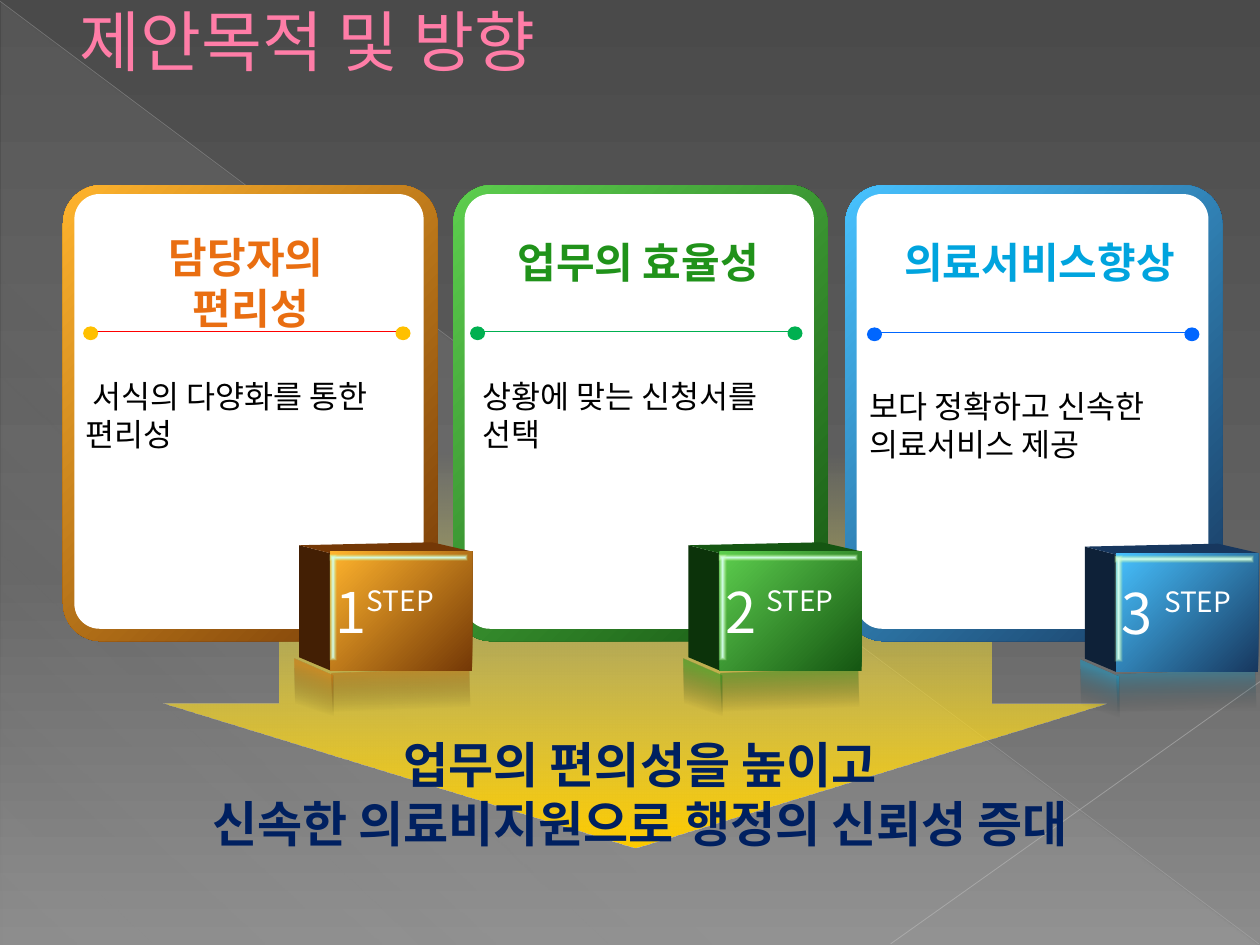
from dataclasses import dataclass

from lxml import etree
from pptx import Presentation
from pptx.dml.color import RGBColor
from pptx.enum.shapes import MSO_CONNECTOR, MSO_SHAPE as SHAPE
from pptx.enum.text import MSO_ANCHOR as ANCHOR, MSO_AUTO_SIZE as AUTOSIZE, PP_ALIGN as ALIGN
from pptx.oxml.ns import qn
from pptx.util import Pt

NOTO = "Noto Sans CJK KR"
SPARTAN = "League Spartan"
WHITE, BLACK = "FFFFFF", "000000"
GLOW = [(0, "D5FFF2", 100), (100, "CCFF99", 0)]


@dataclass
class Step:
    number: str
    heading: str
    body: str
    body_font: str
    accent: str
    rule: str
    dot: str
    dark: str
    light: str
    top: str
    side: str
    reflection_alpha: int
    card: tuple        # left, width
    heading_box: tuple
    rule_x: float
    dots_x: tuple
    rule_y: float
    body_at: tuple
    cube_at: tuple
    label_dx: float


def rgb(value: str) -> RGBColor:
    return RGBColor.from_string(value)


def add_color(parent, value: str, alpha: float = 100) -> None:
    clr = etree.SubElement(parent, qn("a:srgbClr"), val=value)
    if alpha < 100:
        etree.SubElement(clr, qn("a:alpha"), val=str(int(alpha * 1000)))


def set_gradient(fill, parent, stops: list, angle: float | None) -> None:
    """Replace the fill in parent by a gradient; no angle means from the centre."""
    fill.solid()
    grad = etree.Element(qn("a:gradFill"), rotWithShape="1")
    lst = etree.SubElement(grad, qn("a:gsLst"))
    for pos, value, alpha in stops:
        add_color(etree.SubElement(lst, qn("a:gs"), pos=str(pos * 1000)), value, alpha)
    if angle is None:
        way = etree.SubElement(grad, qn("a:path"), path="shape")
        etree.SubElement(way, qn("a:fillToRect"), l="50000", t="50000", r="50000", b="50000")
    else:
        etree.SubElement(grad, qn("a:lin"), ang=str(int(angle * 60000)), scaled="0")
    parent.replace(parent.find(qn("a:solidFill")), grad)


def paint(s, fill: str | list, angle: float | None = None) -> None:
    s.shadow.inherit = False
    s.line.fill.background()
    if isinstance(fill, str):
        s.fill.solid()
        s.fill.fore_color.rgb = rgb(fill)
    else:
        set_gradient(s.fill, s._element.spPr, fill, angle)


def add_box(shapes, kind, box: tuple, fill: str | list, angle: float | None = None,
            rot: float = 0, adj: tuple = ()):
    s = shapes.add_shape(kind, *(Pt(v) for v in box))
    s.rotation = rot
    for i, value in enumerate(adj):
        s.adjustments[i] = value
    paint(s, fill, angle)
    return s


def add_face(shapes, points: list, fill: str) -> None:
    first, *rest = [(Pt(x), Pt(y)) for x, y in points]
    builder = shapes.build_freeform(*first)
    builder.add_line_segments(rest, close=True)
    paint(builder.convert_to_shape(), fill)


def add_line(shapes, ends: tuple, color: str, width: float, alpha: float = 100) -> None:
    s = shapes.add_connector(MSO_CONNECTOR.STRAIGHT, *(Pt(v) for v in ends))
    s.line.width = Pt(width)
    s.line.color.rgb = rgb(color)
    solid = s.line._ln.find(qn("a:solidFill"))
    solid.remove(solid[0])
    add_color(solid, color, alpha)
    etree.SubElement(s._element.spPr, qn("a:effectLst"))


def write(tf, text: str, size: float, color: str, font: str = NOTO,
          bold: bool = False, align=ALIGN.LEFT) -> None:
    tf.text = text
    for p in tf.paragraphs:
        p.alignment = align
        for r in p.runs:
            r.font.size, r.font.bold, r.font.name = Pt(size), bold, font
            r.font.color.rgb = rgb(color)
            etree.SubElement(r._r.get_or_add_rPr(), qn("a:ea"), typeface=NOTO)


def add_text(shapes, box: tuple, text: str, size: float, color: str, wrap: bool = True,
             anchor=ANCHOR.TOP, grow: bool = True, **style) -> None:
    tf = shapes.add_textbox(*(Pt(v) for v in box)).text_frame
    tf.word_wrap = wrap
    tf.vertical_anchor = anchor
    tf.auto_size = AUTOSIZE.SHAPE_TO_FIT_TEXT if grow else AUTOSIZE.NONE
    write(tf, text, size, color, **style)


def add_cube(shapes, step: Step) -> None:
    x, y = step.cube_at
    body = [(0, step.dark, 100), (100, step.light, 100)]

    def fade(start: int, end: int) -> list:
        return [(start, step.accent if step.number != "1" else "CC6600", step.reflection_alpha),
                (end, BLACK, 0)]

    # Reflection
    add_box(shapes, SHAPE.RECTANGLE, (x + 1.4, y + 67, 78.5, 62), fade(0, 37), 90, 358)
    add_box(shapes, SHAPE.TRAPEZOID, (x - 31, y + 70.6, 43.2, 21.6), fade(21, 66), 20, 89, (0.466,))
    # Faces
    add_face(shapes, [(x - 18, y - 4.6), (x, y), (x, y + 67), (x - 18, y + 59.4)], step.side)
    add_face(shapes, [(x - 18, y - 4.6), (x + 58, y - 6.3), (x + 81, y - 1), (x + 81, y), (x, y)],
             step.top)
    add_box(shapes, SHAPE.RECTANGLE, (x, y - 1, 81, 68), body, 225)
    # Lit edges
    add_box(shapes, SHAPE.RECTANGLE, (x - 0.7, y + 0.7, 79.2, 3.6), GLOW)
    add_box(shapes, SHAPE.RECTANGLE, (x - 28.8, y + 28.8, 60.5, 4.3), GLOW, rot=270)
    # Label
    add_text(shapes, (x + step.label_dx, y + 13.7, 61.2, 27.4), "STEP", 16, WHITE, wrap=False)
    add_text(shapes, (x - 4, y + 10, 34.6, 42.5), step.number, 32, WHITE, wrap=False)


def add_step(slide, step: Step) -> None:
    shapes = slide.shapes.add_group_shape().shapes
    x, w = step.card
    frame = [(0, step.dark, 100), (100, step.light, 100)]
    add_box(shapes, SHAPE.ROUNDED_RECTANGLE, (x, 105.8, w, 260.6), frame, 225, adj=(0.102,))
    add_box(shapes, SHAPE.ROUNDED_RECTANGLE, (x + 6.5, 110.9, w - 14.4, 248.4), WHITE, adj=(0.072,))
    add_text(shapes, step.heading_box, step.heading, 24, step.accent, bold=True, align=ALIGN.CENTER)
    add_line(shapes, (step.rule_x, step.rule_y, step.rule_x + 181.4, step.rule_y), step.rule, 0.75)
    for dot_x in step.dots_x:
        add_box(shapes, SHAPE.OVAL, (dot_x, step.rule_y - 2.9, 8.6, 7.9), step.dot)
    add_cube(shapes, step)
    add_text(shapes, (*step.body_at, 198.7, 73.4), step.body, 18, BLACK, anchor=ANCHOR.MIDDLE,
             grow=False, font=step.body_font)


STEPS = [
    Step("1", "담당자의 \n편리성", " 서식의 다양화를 통한 편리성", SPARTAN, "E96E11", "FF0000", "FFC000",
         "743806", "FFB42D", "743806", "431F04", 47, (36, 214), (50.4, 128.9, 185.8, 71.3),
         50.4, (47.5, 226), 189.4, (41.8, 200.2), (188.9, 316.2), 13.7),
    Step("2", "업무의 효율성", "상황에 맞는 신청서를 선택", NOTO, "20921A", "00B050", "00B050",
         "155612", "5DCE4E", "155612", "0C330A", 52, (259, 214), (257, 131.8, 215.3, 36),
         274.3, (268.6, 450), 189.4, (268.6, 200.2), (411.4, 316.2), 19.4),
    Step("3", "의료서비스향상", "보다 정확하고 신속한 의료서비스 제공", NOTO, "00A4DE", "0066FF", "0066FF",
         "17375E", "47C2FF", "17375E", "0E2138", 41, (483, 215.5), (501.1, 131.8, 185.8, 36),
         501.1, (495.4, 676.8), 190, (489.6, 205.9), (637.9, 317), 20.2),
]


def main() -> None:
    prs = Presentation()
    prs.slide_width, prs.slide_height = Pt(720), Pt(540)
    slide = prs.slides.add_slide(prs.slide_layouts[5])
    shapes = slide.shapes

    # Background
    set_gradient(slide.background.fill, slide._element.cSld.bg.bgPr,
                 [(0, "4A4A4A", 100), (60, "626262", 100), (100, "8C8C8C", 100)], 90)
    add_box(shapes, SHAPE.RIGHT_TRIANGLE, (0.7, 1.4, 718.6, 538.6),
            [(0, "D2D2D2", 10), (70, "D2D2D2", 8), (100, "D2D2D2", 1)], 133)
    add_line(shapes, (0, 0.7, 719.3, 539.3), "BFBFBF", 0.39, 35)
    add_line(shapes, (720, 389.5, 509, 539.3), "C6C6C6", 0.47, 45)

    # Arrow towards the conclusion
    add_box(shapes, SHAPE.RIGHT_ARROW, (249.8, 102.2, 226, 538.6),
            [(0, "FFFF66", 0), (100, "FFCC00", 100)], 0, 90, (0.755, 0.366))

    # Title
    title = shapes.title
    title.left, title.top, title.width, title.height = Pt(0), Pt(0), Pt(648), Pt(45.4)
    tf = title.text_frame
    tf.auto_size, tf.vertical_anchor = AUTOSIZE.NONE, ANCHOR.MIDDLE
    write(tf, "제안목적 및 방향", 37.8, "FF7DA7")
    p = tf.paragraphs[0]
    p._p.get_or_add_pPr().set("marL", str(Pt(38.2)))
    outline = etree.Element(qn("a:ln"), w=str(Pt(0.5)))
    add_color(etree.SubElement(outline, qn("a:solidFill")), "B12761")
    p.runs[0]._r.get_or_add_rPr().insert(0, outline)

    # Steps, the first one in front
    for step in reversed(STEPS):
        add_step(slide, step)

    # Conclusion
    add_text(shapes, (39.6, 416.2, 652.3, 74.9), "업무의 편의성을 높이고\n신속한 의료비지원으로 행정의 신뢰성 증대",
             28, "002060", font=SPARTAN, bold=True, align=ALIGN.CENTER)

    prs.save("out.pptx")


if __name__ == "__main__":
    main()
